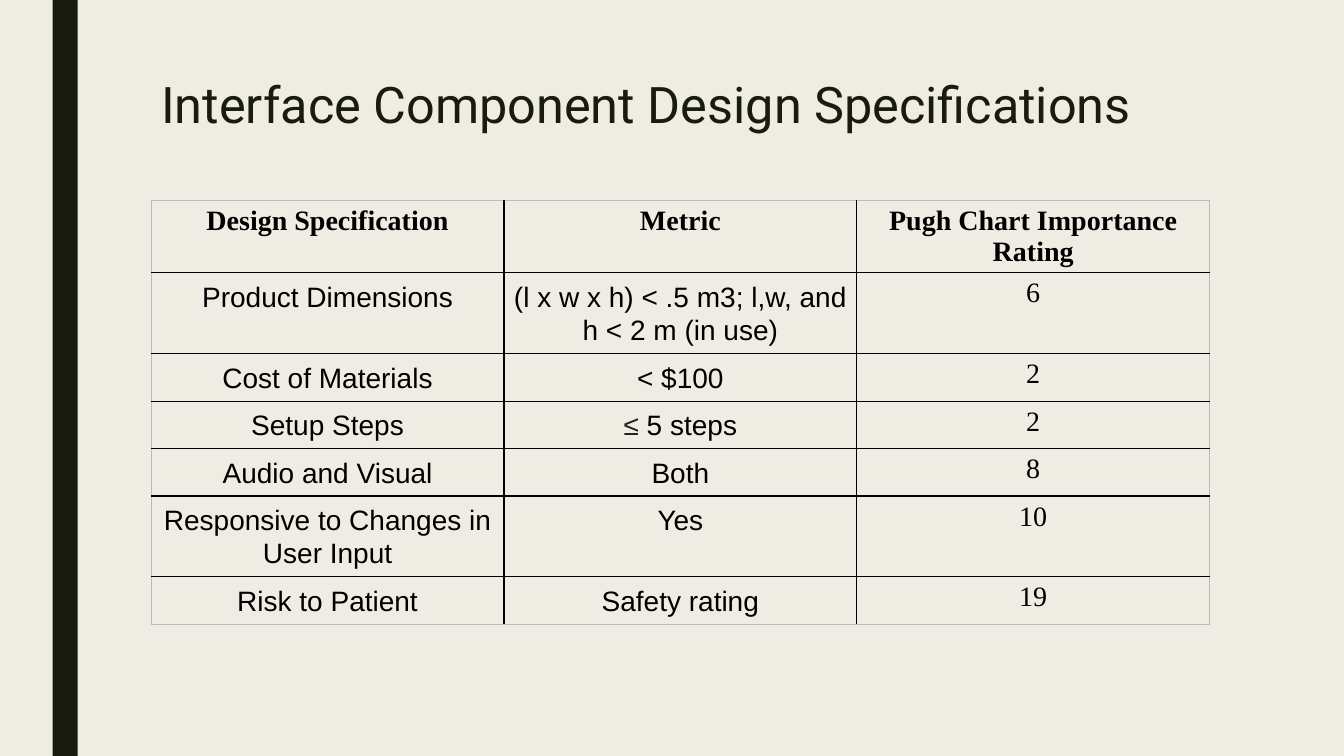
from lxml.etree import SubElement
from pptx import Presentation
from pptx.dml.color import RGBColor
from pptx.enum.shapes import MSO_SHAPE
from pptx.enum.text import MSO_ANCHOR, PP_ALIGN
from pptx.oxml.ns import qn
from pptx.util import Pt

COLORS = {"paper": "EFEDE3", "dark": "191B0E", "ink": "000000",
          "soft": "222222", "edge": "BDBBB3"}

HEAD = {"name": "Times New Roman", "size": Pt(20), "bold": True}
BODY = {"name": "Arial", "size": Pt(20), "bold": False}
RATING = {"name": "Times New Roman", "size": Pt(20), "bold": False}
TITLE = {"name": "Roboto", "size": Pt(36), "bold": False}

# Each cell is a list of (text, colour) runs or a plain string
ROWS = [
    ("Design Specification", "Metric", "Pugh Chart Importance Rating"),
    ("Product Dimensions", "(l x w x h) < .5 m3; l,w, and h < 2 m (in use)", "6"),
    ("Cost of Materials", "< $100", "2"),
    ("Setup Steps", [("≤", "soft"), (" 5 steps", "ink")], "2"),
    ("Audio and Visual", "Both", "8"),
    ("Responsive to Changes in User Input", "Yes", "10"),
    ("Risk to Patient", "Safety rating", "19"),
]


def apply(target, values):
    for name, value in values.items():
        setattr(target, name, value)


def color(name):
    return RGBColor.from_string(COLORS[name])


class Deck:
    def __init__(self):
        self.show = Presentation()
        apply(self.show, {"slide_width": Pt(960), "slide_height": Pt(540)})
        self.slide = self.show.slides.add_slide(self.show.slide_layouts[5])
        fill = self.slide.background.fill
        fill.solid()
        fill.fore_color.rgb = color("paper")

    def bar(self, left, top, width, height):
        shape = self.slide.shapes.add_shape(
            MSO_SHAPE.RECTANGLE, Pt(left), Pt(top), Pt(width), Pt(height))
        shape.shadow.inherit = False
        shape.fill.solid()
        shape.fill.fore_color.rgb = color("dark")
        shape.line.fill.background()

    def text(self, para, runs, font, align, spacing):
        apply(para, {"alignment": align, "line_spacing": spacing})
        for words, tone in runs:
            run = para.add_run()
            run.text = words
            apply(run.font, font)
            run.font.color.rgb = color(tone)

    def title(self, words, left, top, width, height):
        shape = self.slide.shapes.title
        apply(shape, {"left": Pt(left), "top": Pt(top),
                      "width": Pt(width), "height": Pt(height)})
        frame = shape.text_frame
        apply(frame, {"word_wrap": True, "vertical_anchor": MSO_ANCHOR.TOP})
        self.text(frame.paragraphs[0], [(words, "dark")], TITLE,
                  PP_ALIGN.LEFT, 0.89)

    def border(self, cell, tones):
        props = cell._tc.get_or_add_tcPr()
        for side, tone in tones.items():
            line = SubElement(props, qn(f"a:ln{side}"), w=str(Pt(1)))
            fill = SubElement(line, qn("a:solidFill"))
            SubElement(fill, qn("a:srgbClr"), val=COLORS[tone])

    def table(self, rows, left, top, width, step):
        count, cols = len(rows), len(rows[0])
        grid = self.slide.shapes.add_table(
            count, cols, Pt(left), Pt(top), Pt(width), Pt(step * count)).table
        apply(grid, {"first_row": False, "horz_banding": False})
        for r, row in enumerate(rows):
            for c, value in enumerate(row):
                cell = grid.cell(r, c)
                # Pale outer edge, black inner lines
                outer = {"L": c == 0, "R": c == cols - 1,
                         "T": r == 0, "B": r == count - 1}
                self.border(cell, {side: "edge" if out else "ink"
                                   for side, out in outer.items()})
                cell.fill.background()
                # Header and ratings are serif, the rest is looser sans
                font = HEAD if r == 0 else RATING if c == cols - 1 else BODY
                if font is BODY:
                    apply(cell, {f"margin_{side}": Pt(5) for side in
                                 ("left", "right", "top", "bottom")})
                runs = [(value, "ink")] if isinstance(value, str) else value
                self.text(cell.text_frame.paragraphs[0], runs, font,
                          PP_ALIGN.CENTER, 1.07 if font is BODY else 1.0)


def main():
    deck = Deck()
    # Side bar
    deck.bar(37.5, 0, 18, 540)
    # Heading
    deck.title("Interface Component Design Specifications", 108, 54, 756, 116.6)
    # Specifications
    deck.table(ROWS, 108, 143.3, 756, 29.5)
    deck.show.save("out.pptx")


if __name__ == "__main__":
    main()
